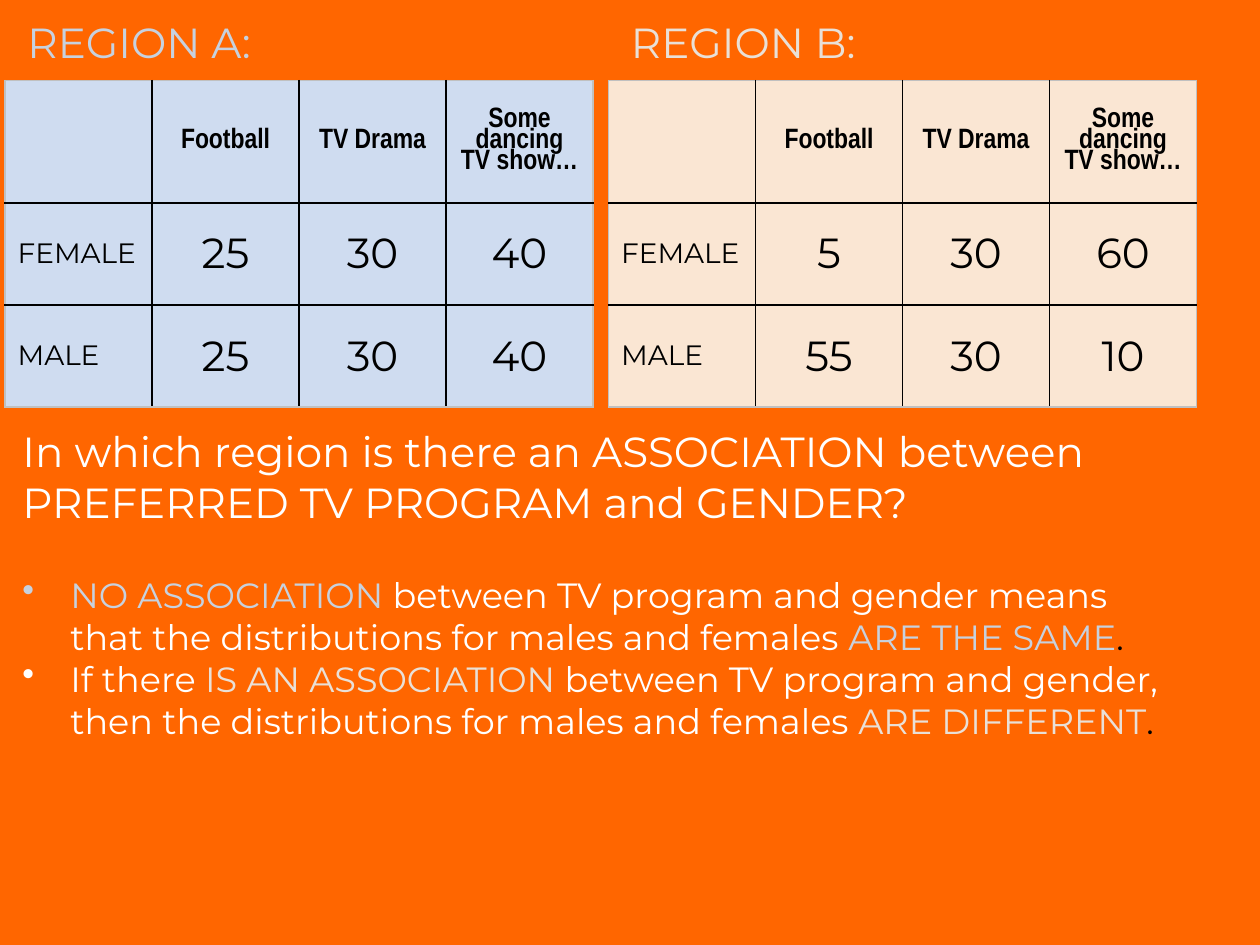
"""Builds a slide that compares TV preferences by gender in two regions."""
import dataclasses

import lxml.etree
import pptx
import pptx.dml.color
import pptx.enum.text
import pptx.oxml.ns
import pptx.util


@dataclasses.dataclass(frozen=True)
class Theme:
    """Colours, fonts and type sizes of the slide."""
    background: str = "FF6600"
    light: str = "FFFFFF"
    dark: str = "000000"
    edge: str = "C0C0C0"
    region_a: str = "C7D1DE"
    region_b: str = "E9E0D7"
    cells_a: str = "CFDCF0"
    cells_b: str = "FAE6D3"
    body_font: str = "Montserrat"
    header_font: str = "Arial Narrow"
    large: int = 24
    medium: int = 20
    small: int = 16


THEME = Theme()
SLIDE_WIDTH, SLIDE_HEIGHT = 10, 7.5
TABLE_TOP = 0.64
COLUMN_WIDTH = 3.5 / 3
ROW_HEIGHTS = (0.97, 0.81, 0.81)
REGION_LEFTS = (0.04, 4.83)
LABEL_OFFSET = 0.08
PROGRAMS = ("Football", "TV Drama", "Some dancing TV show…")
ALIGN = pptx.enum.text.PP_ALIGN


def rgb(value):
    """Return a colour object for a hex string."""
    return pptx.dml.color.RGBColor.from_string(value)


def write(paragraph, text, *, color=THEME.light, size=THEME.large,
          font=THEME.body_font, bold=False, align=None, spacing=None):
    """Append formatted text to a paragraph."""
    run = paragraph.add_run()
    run.text = text
    run.font.name = font
    run.font.size = pptx.util.Pt(size)
    run.font.bold = bold
    run.font.color.rgb = rgb(color)
    if align is not None:
        paragraph.alignment = align
    if spacing is not None:
        paragraph.line_spacing = spacing


def add_text_frame(slide, left, top, width, height, wrap=True):
    """Add a text box and return its text frame."""
    box = slide.shapes.add_textbox(*map(pptx.util.Inches, (left, top, width, height)))
    box.text_frame.word_wrap = wrap
    return box.text_frame


def set_bullet(paragraph, indent=0.38):
    """Give a paragraph a hanging bullet."""
    properties = paragraph._p.get_or_add_pPr()
    properties.set("marL", str(pptx.util.Inches(indent)))
    properties.set("indent", str(-pptx.util.Inches(indent)))
    lxml.etree.SubElement(properties, pptx.oxml.ns.qn("a:buChar"), char="•")


def set_borders(cell, outer):
    """Draw dark rules inside the table and pale ones on its outer sides."""
    properties = cell._tc.get_or_add_tcPr()
    for side in "LRTB":
        line = lxml.etree.SubElement(properties, pptx.oxml.ns.qn(f"a:ln{side}"),
                                     w=str(pptx.util.Pt(1)))
        fill = lxml.etree.SubElement(line, pptx.oxml.ns.qn("a:solidFill"))
        lxml.etree.SubElement(fill, pptx.oxml.ns.qn("a:srgbClr"),
                              val=THEME.edge if side in outer else THEME.dark)


def outer_sides(row, column, row_count, column_count):
    """Return the sides of a cell that lie on the table's outline."""
    sides = {"L": column == 0, "R": column == column_count - 1,
             "T": row == 0, "B": row == row_count - 1}
    return {side for side, is_outer in sides.items() if is_outer}


def cell_format(row, column):
    """Return the text format for a header, gender label or count."""
    if row == 0:
        return dict(size=THEME.small, font=THEME.header_font, bold=True,
                    align=ALIGN.CENTER, spacing=0.8)
    if column == 0:
        return dict(size=THEME.small)
    return dict(align=ALIGN.CENTER)


def add_region(slide, left, name, name_color, cell_color, female, male):
    """Add a region's label and its table of counts."""
    label = add_text_frame(slide, left + LABEL_OFFSET, 0.08, 2.04, 0.5, wrap=False)
    write(label.paragraphs[0], name, color=name_color)

    rows = (("", *PROGRAMS), ("FEMALE", *female), ("MALE", *male))
    column_count = len(rows[0])
    frame = slide.shapes.add_table(
        len(rows), column_count, pptx.util.Inches(left), pptx.util.Inches(TABLE_TOP),
        pptx.util.Inches(COLUMN_WIDTH * column_count), pptx.util.Inches(sum(ROW_HEIGHTS)))
    counts = frame.table
    counts.first_row = counts.horz_banding = False
    for column in counts.columns:
        column.width = pptx.util.Inches(COLUMN_WIDTH)
    for row, height in zip(counts.rows, ROW_HEIGHTS):
        row.height = pptx.util.Inches(height)
    for r, values in enumerate(rows):
        for c, value in enumerate(values):
            cell = counts.cell(r, c)
            set_borders(cell, outer_sides(r, c, len(rows), column_count))
            cell.fill.solid()
            cell.fill.fore_color.rgb = rgb(cell_color)
            cell.vertical_anchor = pptx.enum.text.MSO_ANCHOR.MIDDLE
            if value != "":
                write(cell.text_frame.paragraphs[0], str(value),
                      color=THEME.dark, **cell_format(r, c))


def add_bullets(slide, bullets):
    """Add the explanations, each a list of text and colour pairs."""
    frame = add_text_frame(slide, 0.08, 4.5, 9.33, 1.33)
    for index, pieces in enumerate(bullets):
        paragraph = frame.add_paragraph() if index else frame.paragraphs[0]
        set_bullet(paragraph)
        for text, color in pieces:
            write(paragraph, text, color=color, size=THEME.medium)


def main():
    """Build and save the slide."""
    deck = pptx.Presentation()
    deck.slide_width = pptx.util.Inches(SLIDE_WIDTH)
    deck.slide_height = pptx.util.Inches(SLIDE_HEIGHT)
    slide = deck.slides.add_slide(deck.slide_layouts[6])
    slide.background.fill.solid()
    slide.background.fill.fore_color.rgb = rgb(THEME.background)

    question = add_text_frame(slide, 0.08, 3.33, 9.67, 1.33)
    write(question.paragraphs[0], "In which region is there an ASSOCIATION between "
          "PREFERRED TV PROGRAM and GENDER?")
    add_region(slide, REGION_LEFTS[0], "REGION A:", THEME.region_a, THEME.cells_a,
               female=(25, 30, 40), male=(25, 30, 40))
    add_region(slide, REGION_LEFTS[1], "REGION B:", THEME.region_b, THEME.cells_b,
               female=(5, 30, 60), male=(55, 30, 10))
    add_bullets(slide, (
        (("NO ASSOCIATION ", THEME.region_a),
         ("between TV program and gender means that the distributions "
          "for males and females ", THEME.light),
         ("ARE THE SAME", THEME.region_a), (".", THEME.dark)),
        (("If there ", THEME.light), ("IS AN ASSOCIATION ", THEME.region_b),
         ("between TV program and gender, then the distributions "
          "for males and females ", THEME.light),
         ("ARE DIFFERENT", THEME.region_b), (".", THEME.dark)),
    ))
    deck.save("out.pptx")


if __name__ == "__main__":
    main()
